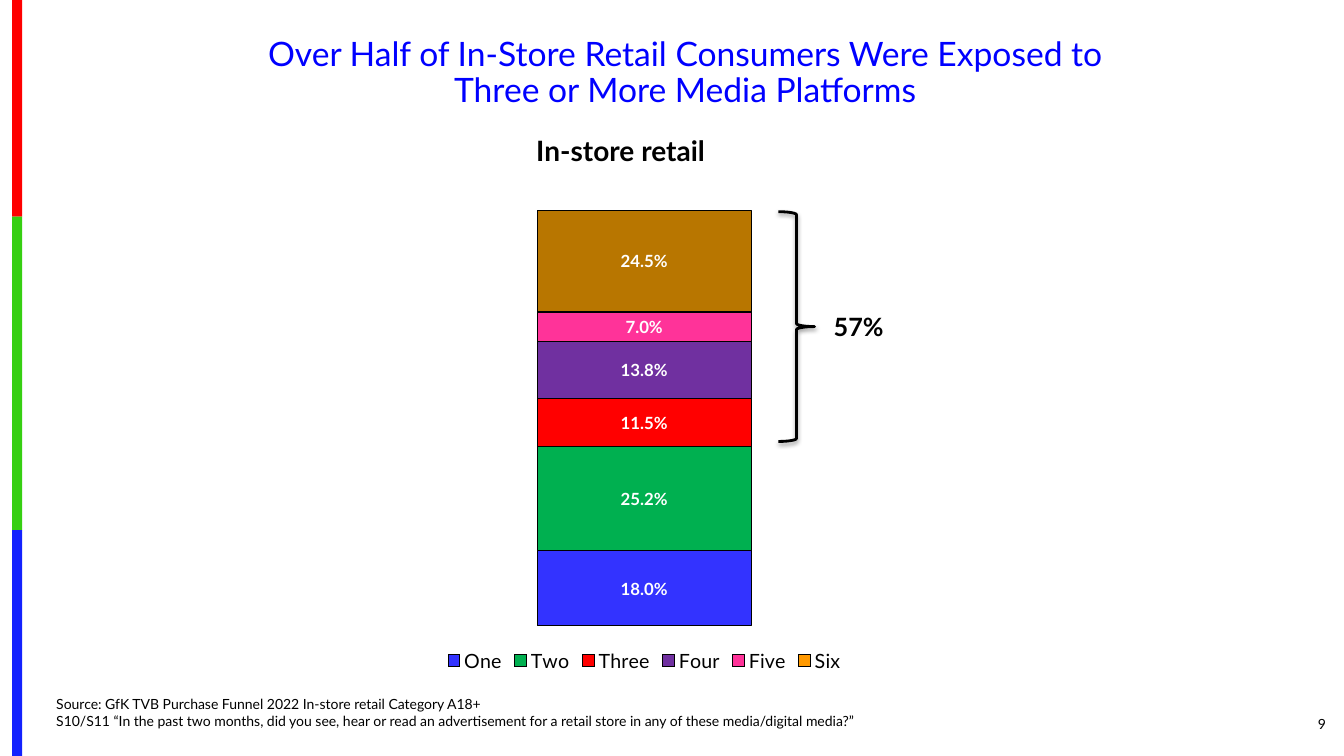
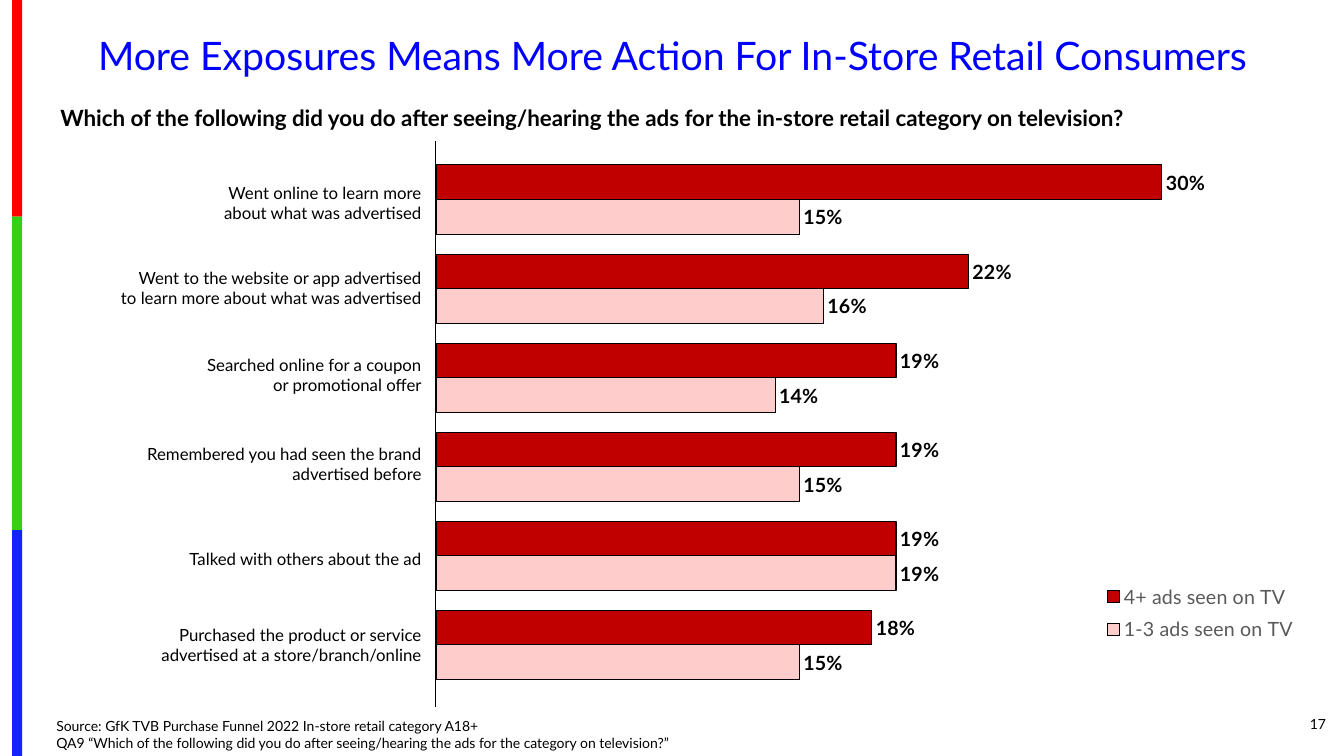
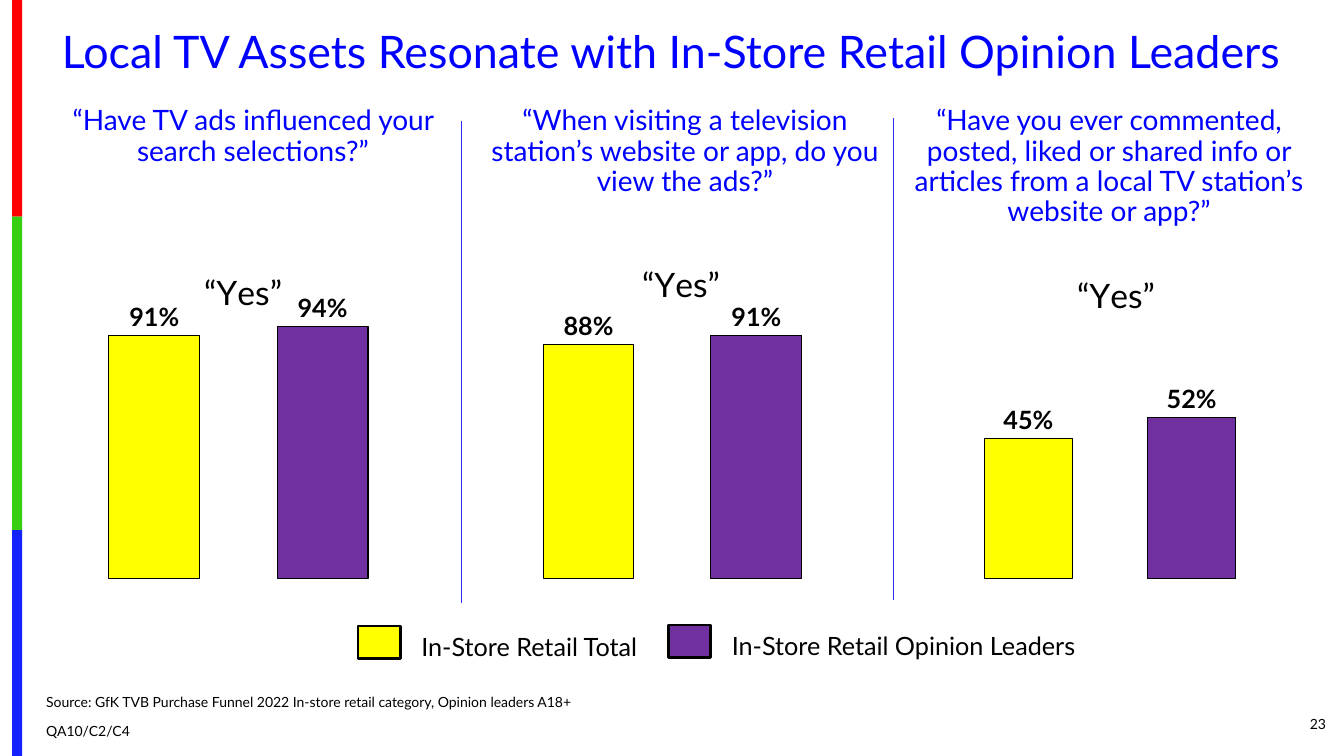
"""Build three slides on in-store retail media exposure, with native charts."""
from lxml import etree
from pptx import Presentation
from pptx.chart.data import CategoryChartData
from pptx.dml.color import RGBColor
from pptx.enum.chart import XL_CHART_TYPE as CT, XL_LABEL_POSITION as LP, XL_LEGEND_POSITION as LEG
from pptx.enum.shapes import MSO_CONNECTOR as MC, MSO_SHAPE as SHP
from pptx.enum.text import MSO_ANCHOR as ANC, PP_ALIGN as AL
from pptx.oxml import parse_xml
from pptx.oxml.ns import nsdecls, qn
from pptx.util import Inches, Pt


class Theme:
    font = "Lato"
    title, ink, white, grey = "0000FF", "000000", "FFFFFF", "595959"
    rule, yellow, purple = "2D2DFE", "FFFF00", "7030A0"
    dark_red, pale_red, brown = "C00000", "FFCCCC", "B87600"
    bands = [("FE0000", 2.15), ("36CF12", 3.11), ("1322FE", 2.24)]
    note, label, legend, sub, big, head, yes = 10, 12, 14, 16, 18, 20, 24


PLATFORMS = [
    ("One", 0.18, "3333FF"), ("Two", 0.252, "00B050"), ("Three", 0.115, "FF0000"),
    ("Four", 0.138, Theme.purple), ("Five", 0.07, "FF3399"), ("Six", 0.245, "FF9900"),
]
ACTIONS = [
    ("Purchased the product or service\vadvertised at a store/branch/online", 6.15, 0.15, 0.18),
    ("Talked with others about the ad", 5.39, 0.19, 0.19),
    ("Remembered you had seen the brand\vadvertised before", 4.35, 0.15, 0.19),
    ("Searched online for a coupon\vor promotional offer", 3.47, 0.14, 0.19),
    ("Went to the website or app advertised\vto learn more about what was advertised", 2.61, 0.16, 0.22),
    ("Went online to learn more\vabout what was advertised", 1.76, 0.15, 0.3),
]
QUESTIONS = [
    dict(text="“Have TV ads influenced your search selections?”", box=(0.55, 1.01, 3.92, 0.71),
         chart=(0.55, 2.38, 3.63, 3.57), vals=(0.91, 0.94), low=0.1,
         plot=(0.04, 0.19, 0.92, 0.75), yes=(0.39, 0.06)),
    dict(text="“When visiting a television station’s website or app, do you view the ads?”",
         box=(4.73, 1.01, 4.13, 1.01), chart=(4.86, 2.38, 3.62, 3.57), vals=(0.88, 0.91), low=0.1,
         plot=(0.04, 0.19, 0.92, 0.75), yes=(0.4, 0.04)),
    dict(text="“Have you ever commented, posted, liked or shared info or articles from a local TV "
              "station’s website or app?”",
         box=(8.79, 1.01, 4.42, 1.31), chart=(9.25, 2.38, 3.52, 3.57), vals=(0.45, 0.52), low=0,
         plot=(0.04, 0.08, 0.92, 0.86), yes=(0.39, 0.07)),
]
LEADER_KEY = [
    ("In-Store Retail Total", Theme.yellow, 3.55, 6.21, 2.42),
    ("In-Store Retail Opinion Leaders", Theme.purple, 6.63, 6.2, 3.69),
]
DIVIDERS = [(4.58, 1.2), (8.86, 1.17)]
PAGES = [
    dict(title="Over Half of In-Store Retail Consumers Were Exposed to\vThree or More Media Platforms",
         box=(0.14, 0.32, 13.31, 0.83), size=24, number="9",
         source=["Source: GfK TVB Purchase Funnel 2022 In-store retail Category A18+\vS10/S11 “In the past two "
                 "months, did you see, hear or read an advertisement for a retail store in any of these "
                 "media/digital media?”"],
         source_box=(0.46, 6.85, 9.53, 0.44), source_style={}),
    dict(title="More Exposures Means More Action For In-Store Retail Consumers",
         box=(0.46, 0.31, 12.42, 0.53), size=28, number="17",
         source=["Source: GfK TVB Purchase Funnel 2022 In-store retail category A18+\vQA9 “Which of the following "
                 "did you do after seeing/hearing the ads for the category on television?”"],
         source_box=(0.46, 7.06, 9.45, 0.44), source_style=dict(anchor=ANC.BOTTOM)),
    dict(title="Local TV Assets Resonate with In-Store Retail Opinion Leaders",
         box=(0.21, 0.25, 12.9, 1.07), size=32, number="23",
         source=["Source: GfK TVB Purchase Funnel 2022 In-store retail category, Opinion leaders A18+", "QA10/C2/C4"],
         source_box=(0.36, 6.85, 10.78, 0.54), source_style=dict(anchor=ANC.BOTTOM, spacing=0.9)),
]


def assign(obj, **values):
    for name, value in values.items():
        setattr(obj, name, value)


def inches(box):
    return [Inches(v) for v in box]


def set_font(font, size, color=Theme.ink, bold=False):
    assign(font, name=Theme.font, size=Pt(size), bold=bold)
    font.color.rgb = RGBColor.from_string(color)


def set_fill(fill, color):
    fill.solid()
    fill.fore_color.rgb = RGBColor.from_string(color)


def set_line(line, color=Theme.ink, width=0.75):
    line.width = Pt(width)
    line.color.rgb = RGBColor.from_string(color)


def add_text(s, box, paragraphs, size, color=Theme.ink, bold=False, align=AL.LEFT, anchor=ANC.TOP, spacing=None):
    tf = s.shapes.add_textbox(*inches(box)).text_frame
    assign(tf, word_wrap=True, vertical_anchor=anchor)
    for i, text in enumerate(paragraphs):
        p = tf.add_paragraph() if i else tf.paragraphs[0]
        p.text = text
        assign(p, alignment=align, line_spacing=spacing, space_before=Pt(10 if i else 0))
        for r in p.runs:
            set_font(r.font, size, color, bold)


def add_shape(s, kind, box, fill=None, line=None):
    sp = s.shapes.add_shape(kind, *inches(box))
    sp.shadow.inherit = False
    if fill:
        set_fill(sp.fill, fill)
    else:
        sp.fill.background()
    if line:
        set_line(sp.line, Theme.ink, line)
    else:
        sp.line.fill.background()
    return sp


def add_rule(s, x, top, bottom, color, width):
    ln = s.shapes.add_connector(MC.STRAIGHT, *inches((x, top, x, bottom)))
    set_line(ln.line, color, width)
    etree.SubElement(ln.element.spPr, qn("a:effectLst"))


def place(chart, tag, *numbers):
    """Give a chart part a manual layout."""
    part = chart.element.find(".//" + qn(tag))
    for old in part.findall(qn("c:layout")):
        part.remove(old)
    inner = '<c:layoutTarget val="inner"/>' if tag == "c:plotArea" else ""
    modes = '<c:xMode val="edge"/><c:yMode val="edge"/>'
    sizes = "".join(f'<c:{k} val="{v}"/>' for k, v in zip("xywh", numbers))
    layout = parse_xml(f'<c:layout {nsdecls("c")}><c:manualLayout>{inner}{modes}{sizes}</c:manualLayout></c:layout>')
    part.insert(0 if tag == "c:plotArea" else 1, layout)


def add_chart(s, kind, box, cats, series, fmt, label, gap, low, high, plot_box, position=None):
    """Add a chart; series holds (name, values, colour), label holds font values."""
    data = CategoryChartData(number_format=fmt)
    data.categories = cats
    for name, vals, _ in series:
        data.add_series(name, vals)
    chart = s.shapes.add_chart(kind, *inches(box), data).chart
    set_font(chart.font, Theme.note)
    assign(chart, has_legend=False, has_title=False)
    chart.category_axis.visible = False
    assign(chart.value_axis, minimum_scale=low, maximum_scale=high, has_major_gridlines=False, visible=False)
    plot = chart.plots[0]
    assign(plot, gap_width=gap, vary_by_categories=False)
    for ser, (_, _, color) in zip(plot.series, series):
        ser.invert_if_negative = False
        set_fill(ser.format.fill, color)
        set_line(ser.format.line)
        labels = ser.data_labels
        assign(labels, show_value=True, number_format=fmt, number_format_is_linked=False)
        if position is not None:
            labels.position = position
        set_font(labels.font, **label)
    place(chart, "c:plotArea", *plot_box)
    return chart


def color_point(chart, series, index, color):
    point = chart.plots[0].series[series].points[index]
    set_fill(point.format.fill, color)
    set_line(point.format.line)


def add_legend(chart, position, color):
    chart.has_legend = True
    assign(chart.legend, position=position, include_in_layout=False)
    set_font(chart.legend.font, Theme.legend, color)


def add_bands(s, layout):
    """Put the colour bands on the shared layout."""
    for ph in list(layout.placeholders):
        ph.element.getparent().remove(ph.element)
    top = 0
    for color, height in Theme.bands:
        band = add_shape(s, SHP.RECTANGLE, (0.12, top, 0.1, height), color)
        layout.shapes.element.append(band.element)
        top += height


def add_frame(s, page):
    add_text(s, page["box"], [page["title"]], page["size"], Theme.title, align=AL.CENTER, spacing=0.9)
    add_text(s, (12.17, 6.98, 1.08, 0.4), [page["number"]], Theme.note, align=AL.RIGHT, anchor=ANC.MIDDLE)
    add_text(s, page["source_box"], page["source"], Theme.note, **page["source_style"])


def draw_platforms(s):
    series = [(name, [val], color) for name, val, color in PLATFORMS]
    chart = add_chart(s, CT.COLUMN_STACKED, (3.63, 1.15, 5.52, 5.56), ["1"], series, "0.0%",
                      dict(size=Theme.label, color=Theme.white, bold=True), 150, 0, 1.2, (0.02, 0.02, 0.96, 0.89))
    chart.plots[0].overlap = 100
    color_point(chart, len(series) - 1, 0, Theme.brown)
    add_legend(chart, LEG.BOTTOM, Theme.ink)
    add_text(s, (5.22, 1.28, 2.18, 0.44), ["In-store retail"], Theme.head, bold=True)
    brace = add_shape(s, SHP.RIGHT_BRACE, (7.72, 2.1, 0.36, 2.28), line=2)
    effects = brace.element.spPr.find(qn("a:effectLst"))
    shadow = etree.SubElement(effects, qn("a:outerShdw"), blurRad=str(Pt(3.1)), dist=str(Pt(1.6)),
                              dir="5400000", rotWithShape="0")
    black = etree.SubElement(shadow, qn("a:srgbClr"), val=Theme.ink)
    etree.SubElement(black, qn("a:alpha"), val="38000")
    add_text(s, (8.17, 3.04, 0.9, 0.4), ["57%"], Theme.big, bold=True)


def draw_actions(s):
    texts, tops, few, many = zip(*ACTIONS)
    series = [("1-3 ads seen on TV", few, Theme.pale_red), ("4+ ads seen on TV", many, Theme.dark_red)]
    chart = add_chart(s, CT.BAR_CLUSTERED, (0.64, 1.37, 12.52, 5.64), [str(i + 1) for i in range(len(ACTIONS))],
                      series, "0%", dict(size=Theme.legend, bold=True), 57, 0, 0.35,
                      (0.295, 0.03, 0.67, 0.94), LP.OUTSIDE_END)
    add_legend(chart, LEG.RIGHT, Theme.grey)
    place(chart, "c:legend", 0.82, 0.77, 0.16, 0.13)
    add_text(s, (0.5, 0.98, 12.44, 0.37),
             ["Which of the following did you do after seeing/hearing the ads for the in-store retail category "
              "on television?"], Theme.sub, bold=True)
    for text, top in zip(texts, tops):
        add_text(s, (0.5, top, 3.78, 0.5 if "\v" in text else 0.3), [text], Theme.label, align=AL.RIGHT)
    add_rule(s, 4.32, 1.4, 7.01, Theme.ink, 1)


def draw_leaders(s):
    for q in QUESTIONS:
        chart = add_chart(s, CT.COLUMN_CLUSTERED, q["chart"], ["1", "2"], [("Series 1", q["vals"], "3333FF")], "0%",
                          dict(size=Theme.big, bold=True), 85, q["low"], 1, q["plot"], LP.OUTSIDE_END)
        for i, (_, color, *_) in enumerate(LEADER_KEY):
            color_point(chart, 0, i, color)
        chart.has_title = True
        tf = chart.chart_title.text_frame
        tf.text = "“Yes”"
        set_font(tf.paragraphs[0].runs[0].font, Theme.yes)
        place(chart, "c:title", *q["yes"])
        add_text(s, q["box"], [q["text"]], Theme.head, Theme.title, align=AL.CENTER, spacing=0.9)
    for text, color, left, top, width in LEADER_KEY:
        add_shape(s, SHP.RECTANGLE, (left, top, 0.42, 0.32), color, 2)
        add_text(s, (left + 0.53, top, width, 0.4), [text], Theme.big)
    for x, top in DIVIDERS:
        add_rule(s, x, top, top + 4.78, Theme.rule, 0.75)


def main():
    prs = Presentation()
    assign(prs, slide_width=Inches(13.33), slide_height=Inches(7.5))
    layout = prs.slide_layouts[6]
    for i, (page, draw) in enumerate(zip(PAGES, (draw_platforms, draw_actions, draw_leaders))):
        s = prs.slides.add_slide(layout)
        if i == 0:
            add_bands(s, layout)
        draw(s)
        add_frame(s, page)
    prs.save("out.pptx")


if __name__ == "__main__":
    main()
